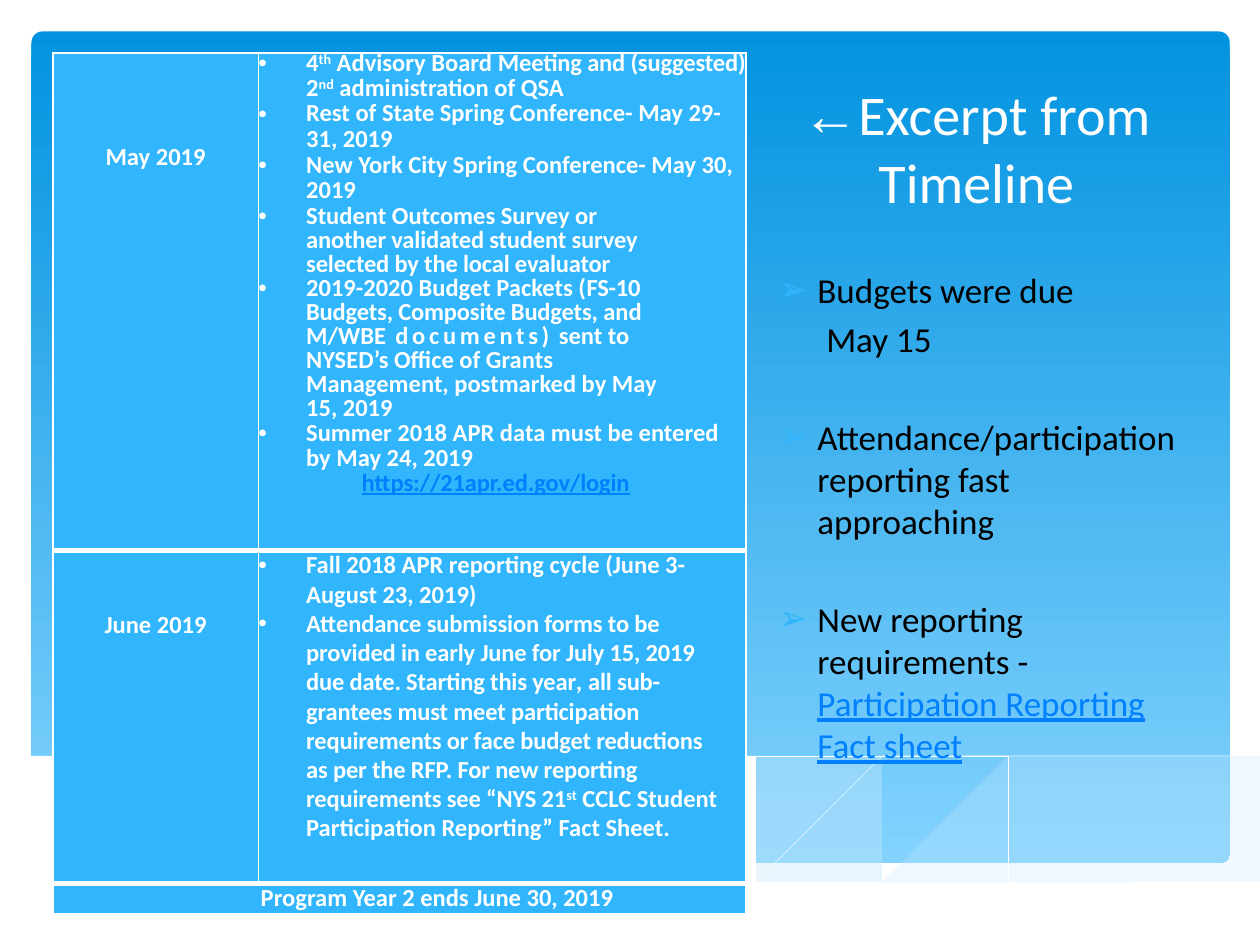
from lxml.etree import SubElement
from pptx import Presentation
from pptx.dml.color import RGBColor
from pptx.enum.shapes import MSO_SHAPE
from pptx.enum.text import MSO_ANCHOR, PP_ALIGN
from pptx.oxml.ns import qn
from pptx.util import Inches, Pt

COLORS = {"white": "FFFFFF", "black": "000000", "cell": "31B6FD", "link": "0080FF",
          "panel_top": "0293E0", "panel_bottom": "83D3FE", "wave": "C6E7FC"}
LINK = {"color": "link", "underline": True}
SUPER = {"baseline": 30000}
TIGHT = {"spacing": -10}

RIGHT_WAVE = [[(9.77, 6.01), (9.22, 6.11), (8.62, 6.25), (7.8, 6.44), (7.07, 6.59), (6.62, 6.67)],
              [(6.62, 6.67), (7.06, 6.73), (7.58, 6.78), (8.04, 6.8), (8.55, 6.78),
               (8.98, 6.72), (9.37, 6.63), (9.77, 6.49)]]
LONG_WAVE = [[(8.94, 6.75), (8.08, 6.62), (7.07, 6.42), (6.3, 6.24), (5.55, 6.07), (4.89, 5.96),
              (4.2, 5.89), (3.62, 5.87), (2.87, 5.93)],
             [(2.87, 5.93), (3.63, 6.04), (4.5, 6.24), (5.3, 6.42), (6.19, 6.6), (6.96, 6.72),
              (7.62, 6.79), (8.19, 6.8), (8.94, 6.75)]]
FALLING_LINE = [[(3.1, 5.97), (3.53, 5.91), (4.17, 5.89), (4.89, 5.92), (5.82, 6.02),
                 (6.66, 6.15), (7.61, 6.35), (8.32, 6.52), (9.08, 6.73)]]
RISING_LINE = [[(6.14, 6.59), (6.96, 6.37), (7.77, 6.18), (8.67, 6), (9.25, 5.92), (9.76, 5.87)]]
WHITE_BASE = [[(9.77, 6.48), (9.3, 6.64), (8.75, 6.75), (8.09, 6.79), (7.44, 6.76), (6.68, 6.67),
               (5.79, 6.51), (5.03, 6.35), (4.18, 6.15), (3.4, 5.99), (2.71, 5.9), (2.11, 5.86),
               (1.61, 5.86), (1.06, 5.91), (0.59, 6.01), (0.23, 6.15)],
              [(0.23, 7.31), (9.77, 7.31)]]

MAY_ITEMS = [
    ([("4", {}), ("th", SUPER), (" Advisory Board ", {}), ("Meeting and (suggested) 2", TIGHT),
      ("nd", SUPER), (" administration of QSA", {})], {"leading": Pt(14.3)}),
    ([("Rest of State Spring Conference- May 29-31, 2019", {})], {"leading": Pt(14.6)}),
    ([("New York City Spring Conference- May 30, 2019", {})], {"leading": Pt(14.6)}),
    ([("Student Outcomes Survey or ", {}),
      ("another validated student survey selected by the local evaluator", TIGHT)],
     {"leading": Pt(13.7), "before": 1.1, "right": 0.64}),
    ([("2019-2020 Budget Packets (", {}), ("FS-10 Budgets, Composite Budgets, ", TIGHT),
      ("and M/WBE", {}), (" documents)", {"spacing": 210}),
      (" sent to NYSED’s Office of Grants Management, postmarked by May 15, 2019", {})],
     {"leading": Pt(13.7), "right": 0.64}),
    ([("Summer 2018 APR data must be entered by May 24, 2019", {})],
     {"leading": Pt(14.3), "right": 0.05}),
]
JUNE_ITEMS = [
    [("Fall 2018 APR reporting cycle (June 3-August 23, 2019)", {})],
    [("Attendance submission forms to be provided in early June for July 15, 2019 due date. "
      "Starting this year", TIGHT), (", ", {"italic": True}),
     ("all sub-grantees must meet participation requirements or face budget reductions as per "
      "the RFP. For new reporting requirements see “NYS 21", TIGHT), ("st", SUPER),
     (" CCLC Student Participation Reporting” Fact Sheet.", {})],
]


def rgb(name):
    return RGBColor.from_string(COLORS[name])


def smooth(points, steps=5):
    if len(points) < 3:
        return points
    padded = [points[0], *points, points[-1]]
    result = [points[0]]
    for a, b, c, d in zip(padded, padded[1:], padded[2:], padded[3:]):
        for step in range(1, steps + 1):
            t = step / steps
            result.append(tuple(
                (2 * q + (r - p) * t + (2 * p - 5 * q + 4 * r - s) * t ** 2
                 + (3 * q - p - 3 * r + s) * t ** 3) / 2 for p, q, r, s in zip(a, b, c, d)))
    return result


def add_wave(page, curves, fill=None, opacity=None):
    points = [point for curve in curves for point in smooth(curve)]
    builder = page.shapes.build_freeform(*points[0], scale=Inches(1))
    builder.add_line_segments(points[1:], close=fill is not None)
    wave = builder.convert_to_shape()
    wave.shadow.inherit = False
    if fill:
        wave.fill.solid()
        wave.fill.fore_color.rgb = rgb(fill)
        wave.line.fill.background()
    else:
        wave.fill.background()
        wave.line.color.rgb = rgb("white")
        wave.line.width = Pt(0.25)
    if opacity:
        color = wave.fill._xPr.find(".//" + qn("a:srgbClr"))
        SubElement(color, qn("a:alpha"), val=str(opacity * 1000))


def add_panel(page):
    panel = page.shapes.add_shape(MSO_SHAPE.ROUNDED_RECTANGLE, Inches(0.25), Inches(0.25),
                                  Inches(9.51), Inches(6.6))
    panel.adjustments[0] = 0.013
    panel.shadow.inherit = False
    panel.line.fill.background()
    panel.fill.gradient()
    panel.fill.gradient_angle = 270
    for stop, name, position in zip(panel.fill.gradient_stops, ("panel_top", "panel_bottom"), (0, 1)):
        stop.color.rgb = rgb(name)
        stop.position = position


def add_para(frame, spans, size, color, bold=False, align=PP_ALIGN.LEFT, leading=None,
             before=0, left=0, hanging=0, right=0, bullet=None):
    para = frame.paragraphs[0]
    if para.runs:
        para = frame.add_paragraph()
    para.alignment = align
    para.space_before = Pt(before)
    if leading:
        para.line_spacing = leading
    props = para._p.get_or_add_pPr()
    for key, value in (("marL", left), ("marR", right), ("indent", -hanging)):
        props.set(key, str(Inches(value)))
    if bullet:
        bullet_color = SubElement(props, qn("a:buClr"))
        SubElement(bullet_color, qn("a:srgbClr"), val=COLORS["white" if bullet == "•" else "cell"])
        SubElement(props, qn("a:buFont"), typeface="Arial")
        SubElement(props, qn("a:buChar"), char=bullet)
    for text, style in spans:
        span = para.add_run()
        span.text = text
        span.font.name = style.get("font", "Calibri")
        span.font.size = Pt(size)
        span.font.bold = bold
        span.font.italic = style.get("italic", False)
        span.font.underline = style.get("underline", False)
        span.font.color.rgb = rgb(style.get("color", color))
        for key, attribute in (("spacing", "spc"), ("baseline", "baseline")):
            if key in style:
                span._r.get_or_add_rPr().set(attribute, str(style[key]))


def add_text_box(page, left, top, width, height, anchor):
    box = page.shapes.add_textbox(Inches(left), Inches(top), Inches(width), Inches(height))
    box.text_frame.word_wrap = True
    box.text_frame.vertical_anchor = anchor
    return box.text_frame


def style_cell(cell, top_width, bottom_width):
    cell.margin_left = cell.margin_right = cell.margin_top = cell.margin_bottom = 0
    props = cell._tc.get_or_add_tcPr()
    for side, width in (("L", 1), ("R", 1), ("T", top_width), ("B", bottom_width)):
        border = SubElement(props, qn("a:ln" + side), w=str(Pt(width)))
        SubElement(SubElement(border, qn("a:solidFill")), qn("a:srgbClr"), val=COLORS["white"])
    cell.fill.solid()
    cell.fill.fore_color.rgb = rgb("cell")


def add_timeline(page):
    table = page.shapes.add_table(3, 2, Inches(0.42), Inches(0.42), Inches(5.5), Inches(6.83)).table
    for column, width in zip(table.columns, (1.63, 3.87)):
        column.width = Inches(width)
    for row, height, edges in zip(table.rows, (3.95, 2.64, 0.24), ((1, 3), (3, 3), (3, 1))):
        row.height = Inches(height)
        for cell in row.cells:
            style_cell(cell, *edges)
    table.cell(2, 0).merge(table.cell(2, 1))
    text = {"size": 14, "color": "white", "bold": True}
    bullet = {**text, "left": 0.38, "hanging": 0.38, "bullet": "•"}
    for index, (month, offset) in enumerate((("May 2019", 0.71), ("June 2019", 0.47))):
        cell = table.cell(index, 0)
        cell.margin_top = Inches(offset)
        add_para(cell.text_frame, [(month, {})], align=PP_ALIGN.CENTER, **text)
    may = table.cell(0, 1).text_frame
    for spans, layout in MAY_ITEMS:
        add_para(may, spans, **bullet, **layout)
    add_para(may, [("https://21apr.ed.gov/login", {**LINK, **TIGHT})], left=0.82,
             leading=Pt(14.3), **text)
    for spans in JUNE_ITEMS:
        add_para(table.cell(1, 1).text_frame, spans, leading=0.98, right=0.18, **bullet)
    add_para(table.cell(2, 0).text_frame, [("Program Year 2 ends June 30, 2019", {})],
             align=PP_ALIGN.CENTER, left=0.6, leading=0.98, **text)


def add_title(page):
    frame = add_text_box(page, 6, 0.42, 3.5, 1.33, MSO_ANCHOR.BOTTOM)
    add_para(frame, [("←", {"font": "Times New Roman"}), ("Excerpt from Timeline", {})],
             32, "white", align=PP_ALIGN.CENTER)


def add_notices(page):
    frame = add_text_box(page, 6.08, 2.08, 3.5, 5.08, MSO_ANCHOR.TOP)
    bullet = {"size": 20, "color": "black", "left": 0.31, "hanging": 0.31, "bullet": "➢"}
    add_para(frame, [("Budgets were due", {})], **bullet)
    add_para(frame, [("May 15", {})], 20, "black", before=4, left=0.38)
    add_para(frame, [("Attendance/participation reporting fast approaching", {})], before=32, **bullet)
    add_para(frame, [("New reporting requirements - ", {}),
                     ("Participation Reporting Fact sheet", LINK)], before=32, **bullet)


def main():
    deck = Presentation()
    deck.slide_width, deck.slide_height = Inches(10), Inches(7.5)
    page = deck.slides.add_slide(deck.slide_layouts[6])
    add_panel(page)
    add_wave(page, RIGHT_WAVE, "wave", 29)
    add_wave(page, LONG_WAVE, "wave", 40)
    add_wave(page, FALLING_LINE)
    add_wave(page, RISING_LINE)
    add_wave(page, WHITE_BASE, "white")
    add_title(page)
    add_notices(page)
    add_timeline(page)
    deck.save("out.pptx")


if __name__ == "__main__":
    main()
